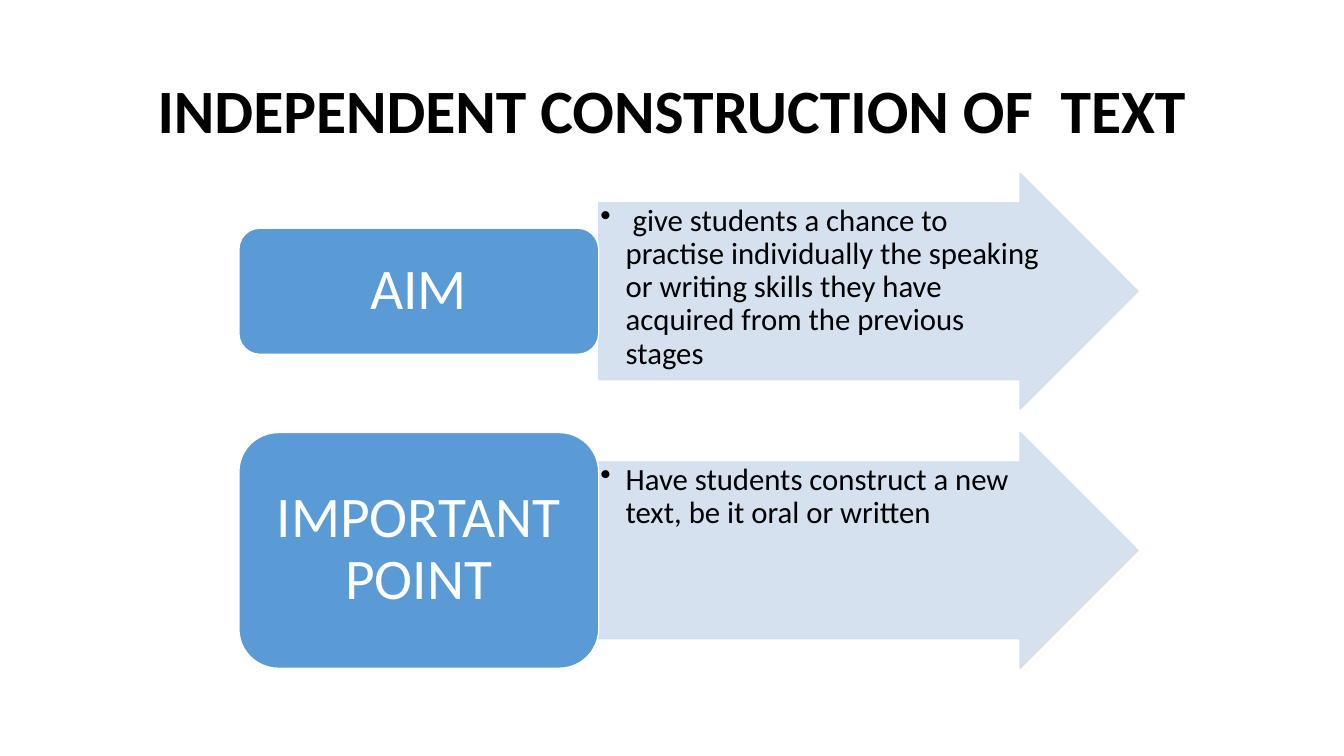
from dataclasses import dataclass

from lxml.etree import SubElement
from pptx import Presentation
from pptx.dml.color import RGBColor
from pptx.enum.shapes import MSO_SHAPE as Preset
from pptx.enum.text import MSO_ANCHOR as Anchor, PP_ALIGN as Align
from pptx.oxml.ns import qn
from pptx.shapes.autoshape import Shape
from pptx.slide import Slide
from pptx.util import Cm, Pt

COLORS = {"text": "000000", "light": "FFFFFF", "label": "5B9BD5", "arrow": "D2DEEF"}
FONT = "Calibri"
LABEL_LEFT, LABEL_WIDTH = 6.02, 9.07
ARROW_LEFT, ARROW_WIDTH = LABEL_LEFT + LABEL_WIDTH, 13.59
ROW_TOP, ROW_HEIGHT, ROW_PITCH = 4.37, 5.94, 6.53


@dataclass(frozen=True)
class Stage:
    """A labelled box with the arrow that explains it."""

    label: str
    detail: str
    label_height: float


STAGES = (
    Stage(
        "AIM",
        " give students a chance to practise individually the speaking or writing "
        "skills they have acquired from the previous stages",
        3.18,
    ),
    Stage("IMPORTANT POINT", "Have students construct a new text, be it oral or written", ROW_HEIGHT),
)


def color(name: str) -> RGBColor:
    """Look up a named colour."""
    return RGBColor.from_string(COLORS[name])


def write(
    box: Shape,
    text: str,
    *,
    size: float,
    ink: str = "text",
    bold: bool = False,
    align: Align = Align.CENTER,
    anchor: Anchor = Anchor.MIDDLE,
    margins: tuple[float, float] = (0.25, 0.13),
    bullet: bool = False,
) -> None:
    """Fill a box with one formatted paragraph."""
    frame = box.text_frame
    frame.word_wrap = True
    frame.vertical_anchor = anchor
    frame.margin_left = frame.margin_right = Cm(margins[0])
    frame.margin_top = frame.margin_bottom = Cm(margins[1])
    para = frame.paragraphs[0]
    para.alignment = align
    para.line_spacing = 0.9
    if bullet:
        properties = para._p.get_or_add_pPr()
        properties.set("marL", str(Cm(0.64)))
        properties.set("indent", str(-Cm(0.64)))
        SubElement(properties, qn("a:buChar"), char="•")
    span = para.add_run()
    span.text = text
    span.font.name = FONT
    span.font.size = Pt(size)
    span.font.bold = bold
    span.font.color.rgb = color(ink)


def add_block(
    page: Slide, preset: Preset, left: float, top: float, width: float, height: float,
    fill: str, line: str, opacity: int = 100,
) -> Shape:
    """Add a filled and outlined preset shape."""
    block = page.shapes.add_shape(preset, Cm(left), Cm(top), Cm(width), Cm(height))
    block.shadow.inherit = False
    block.fill.solid()
    block.fill.fore_color.rgb = color(fill)
    block.line.color.rgb = color(line)
    block.line.width = Pt(1)
    if opacity < 100:
        for tone in block._element.spPr.iter(qn("a:srgbClr")):
            SubElement(tone, qn("a:alpha"), val=str(opacity * 1000))
    return block


def add_stage(page: Slide, stage: Stage, top: float) -> None:
    """Draw the arrow and the label of one stage."""
    arrow = add_block(
        page, Preset.RIGHT_ARROW, ARROW_LEFT, top, ARROW_WIDTH, ROW_HEIGHT, "arrow", "arrow", 90
    )
    arrow.adjustments[0] = 0.75
    arrow.adjustments[1] = 0.5
    write(
        arrow, stage.detail, size=22, align=Align.LEFT, anchor=Anchor.TOP,
        margins=(0.04, 0.04), bullet=True,
    )
    label_top = top + (ROW_HEIGHT - stage.label_height) / 2
    label = add_block(
        page, Preset.ROUNDED_RECTANGLE, LABEL_LEFT, label_top, LABEL_WIDTH,
        stage.label_height, "label", "light",
    )
    write(label, stage.label, size=41, ink="light", margins=(0.43, 0.22))


def main() -> None:
    """Build and save the slide."""
    deck = Presentation()
    deck.slide_width, deck.slide_height = Cm(33.87), Cm(19.05)
    page = deck.slides.add_slide(deck.slide_layouts[6])
    title = page.shapes.add_textbox(Cm(2.34), Cm(1.02), Cm(29.21), Cm(3.68))
    write(title, "INDEPENDENT CONSTRUCTION OF  TEXT", size=44, bold=True)
    for index, stage in enumerate(STAGES):
        add_stage(page, stage, ROW_TOP + index * ROW_PITCH)
    deck.save("out.pptx")


if __name__ == "__main__":
    main()
